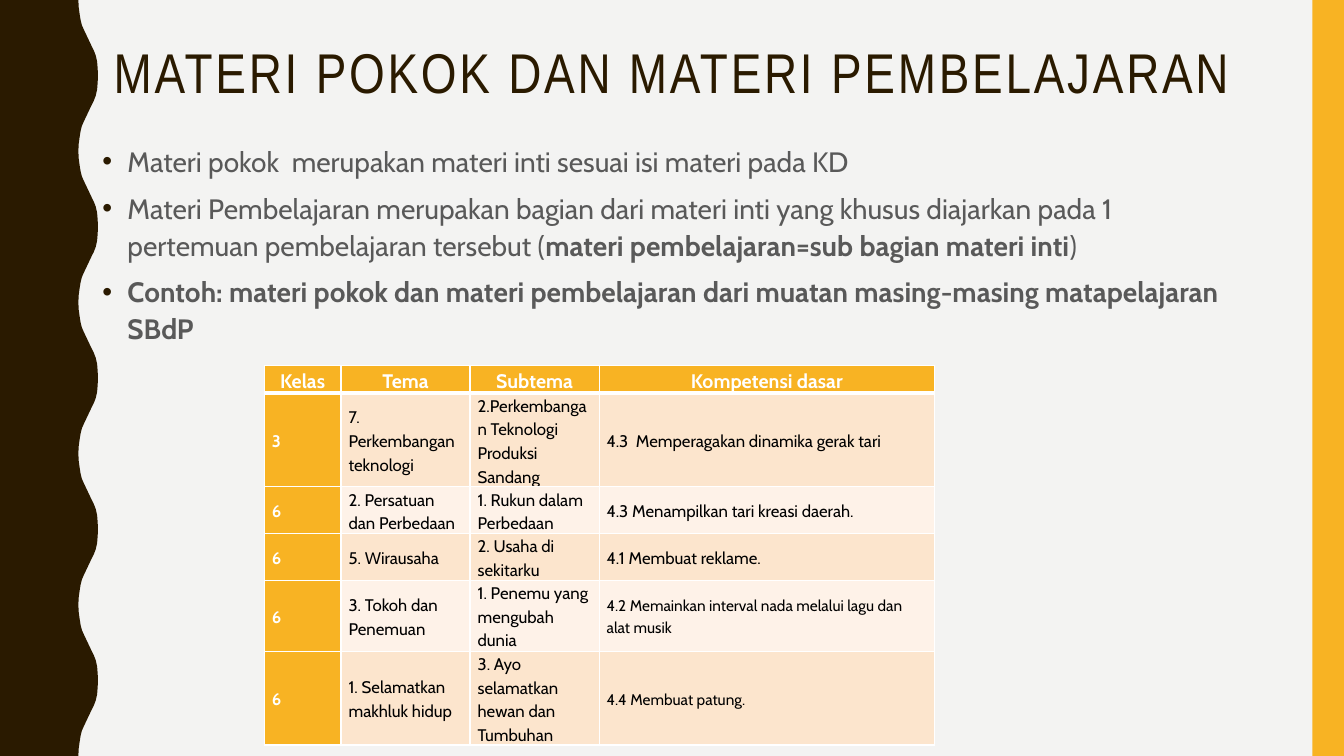
from lxml.etree import SubElement
from pptx import Presentation
from pptx.dml.color import RGBColor
from pptx.enum.shapes import MSO_SHAPE as Shape
from pptx.enum.text import MSO_ANCHOR as Anchor, PP_ALIGN as Align
from pptx.oxml.ns import qn
from pptx.util import Pt

BROWN = RGBColor(0x2A, 0x1A, 0x00)
GOLD = RGBColor(0xF8, 0xB3, 0x23)
PAPER = RGBColor(0xF3, 0xF3, 0xF2)
GREY = RGBColor(0x59, 0x59, 0x59)
PEACH = RGBColor(0xFC, 0xE5, 0xCD)
CREAM = RGBColor(0xFE, 0xF2, 0xE8)
WHITE = RGBColor(0xFF, 0xFF, 0xFF)
BLACK = RGBColor(0x00, 0x00, 0x00)

SLIDE_WIDTH, SLIDE_HEIGHT = 960, 540
WAVE_LENGTH = 108
HALF_WAVE = [(56, 0), (56.2, 5), (56.9, 10), (57.6, 14.4), (58.5, 18), (59.8, 21),
             (65.5, 33), (67, 36), (68.4, 39.6), (69.4, 44), (69.8, 49), (70, 54)]

POINTS = [
    [("Materi pokok  merupakan materi inti sesuai isi materi pada KD", False)],
    [("Materi Pembelajaran merupakan bagian dari materi inti yang khusus diajarkan "
      "pada 1 pertemuan pembelajaran tersebut (", False),
     ("materi pembelajaran=sub bagian materi inti", True),
     (")", False)],
    [("Contoh: materi pokok dan materi pembelajaran dari muatan masing-masing "
      "matapelajaran SBdP", True)],
]

HEADINGS = ["Kelas", "Tema", "Subtema", "Kompetensi dasar"]
LESSONS = [
    ("3", "7.  Perkembangan teknologi", "2.Perkembangan Teknologi Produksi Sandang",
     "4.3  Memperagakan dinamika gerak tari", 12),
    ("6", "2. Persatuan dan Perbedaan", "1. Rukun dalam Perbedaan",
     "4.3 Menampilkan tari kreasi daerah.", 12),
    ("6", "5. Wirausaha", "2. Usaha di sekitarku", "4.1 Membuat reklame.", 12),
    ("6", "3. Tokoh dan Penemuan", "1. Penemu yang mengubah dunia",
     "4.2 Memainkan interval nada melalui lagu dan alat musik", 11),
    ("6", "1. Selamatkan makhluk hidup", "3. Ayo selamatkan hewan dan Tumbuhan",
     "4.4 Membuat patung.", 11),
]
COLUMN_WIDTHS = [54.8, 92.2, 92.2, 239.8]
ROW_HEIGHTS = [19.5, 67, 33.5, 33.5, 50.5, 67]


def add_run(paragraph, text, size, color, bold=False, font="Cabin"):
    run = paragraph.add_run()
    run.text = text
    run.font.name = font
    run.font.size = Pt(size)
    run.font.bold = bold
    run.font.color.rgb = color
    return run


def paint(shape, color):
    shape.shadow.inherit = False
    shape.fill.solid()
    shape.fill.fore_color.rgb = color
    shape.line.fill.background()


def add_wavy_edge(slide):
    wave = HALF_WAVE + [(x, WAVE_LENGTH - y) for x, y in HALF_WAVE[-2::-1]]
    edge = [(Pt(x), Pt(y + start)) for start in range(0, SLIDE_HEIGHT, WAVE_LENGTH)
            for x, y in wave]
    outline = slide.shapes.build_freeform(0, 0)
    outline.add_line_segments(edge + [(0, Pt(SLIDE_HEIGHT))], close=True)
    paint(outline.convert_to_shape(), BROWN)


def add_side_bar(slide):
    bar = slide.shapes.add_shape(Shape.RECTANGLE, Pt(937.5), 0, Pt(22.5), Pt(SLIDE_HEIGHT))
    paint(bar, GOLD)


def set_title(slide, text):
    title = slide.shapes.title
    title.left, title.top, title.width, title.height = Pt(66), Pt(28.8), Pt(828), Pt(68.4)
    title.text_frame.vertical_anchor = Anchor.TOP
    title.text_frame.word_wrap = True
    paragraph = title.text_frame.paragraphs[0]
    paragraph.alignment = Align.CENTER
    paragraph.line_spacing = 0.9
    run = add_run(paragraph, text, 40, BROWN, font="Arial Narrow")
    run.font._element.set("spc", "200")


def add_bullet(paragraph):
    properties = paragraph._p.get_or_add_pPr()
    properties.set("marL", str(Pt(18)))
    properties.set("indent", str(-Pt(18)))
    color = SubElement(properties, qn("a:buClr"))
    SubElement(color, qn("a:srgbClr")).set("val", str(BROWN))
    SubElement(properties, qn("a:buFont")).set("typeface", "Arial")
    SubElement(properties, qn("a:buChar")).set("char", "•")


def add_points(slide, points):
    body = slide.shapes.add_textbox(Pt(66), Pt(97.2), Pt(828), Pt(389.5)).text_frame
    body.word_wrap = True
    for index, runs in enumerate(points):
        paragraph = body.add_paragraph() if index else body.paragraphs[0]
        add_bullet(paragraph)
        paragraph.line_spacing = 1.1
        if index:
            paragraph.space_before = Pt(7)
        for text, bold in runs:
            add_run(paragraph, text, 20, GREY, bold)


def set_borders(cell, top=1, bottom=1):
    properties = cell._tc.get_or_add_tcPr()
    widths = [("a:lnL", 1), ("a:lnR", 1), ("a:lnT", top), ("a:lnB", bottom)]
    for index, (side, width) in enumerate(widths):
        line = properties.makeelement(qn(side), {"w": str(Pt(width))})
        fill = SubElement(line, qn("a:solidFill"))
        SubElement(fill, qn("a:srgbClr")).set("val", str(WHITE))
        properties.insert(index, line)


def fill_cell(cell, text, size, color, background, bold=False, centred=False):
    cell.fill.solid()
    cell.fill.fore_color.rgb = background
    cell.margin_left = cell.margin_right = Pt(5.4)
    cell.margin_top = cell.margin_bottom = 0
    cell.vertical_anchor = Anchor.TOP if centred else Anchor.MIDDLE
    paragraph = cell.text_frame.paragraphs[0]
    paragraph.alignment = Align.CENTER if centred else Align.LEFT
    paragraph.line_spacing = 1.15
    add_run(paragraph, text, size, color, bold)


def add_lessons(slide):
    table = slide.shapes.add_table(
        len(ROW_HEIGHTS), len(COLUMN_WIDTHS), Pt(188.8), Pt(261.2),
        Pt(sum(COLUMN_WIDTHS)), Pt(sum(ROW_HEIGHTS))).table
    for column, width in zip(table.columns, COLUMN_WIDTHS):
        column.width = Pt(width)
    for row, height in zip(table.rows, ROW_HEIGHTS):
        row.height = Pt(height)
    for column, heading in enumerate(HEADINGS):
        cell = table.cell(0, column)
        fill_cell(cell, heading, 14, WHITE, GOLD, bold=True, centred=True)
        set_borders(cell, bottom=3)
    for row, (grade, theme, subtheme, skill, skill_size) in enumerate(LESSONS, 1):
        band = PEACH if row % 2 else CREAM
        fill_cell(table.cell(row, 0), grade, 12, WHITE, GOLD, bold=True)
        fill_cell(table.cell(row, 1), theme, 12, BLACK, band)
        fill_cell(table.cell(row, 2), subtheme, 12, BLACK, band)
        fill_cell(table.cell(row, 3), skill, skill_size, BLACK, band)
        for column in range(len(COLUMN_WIDTHS)):
            set_borders(table.cell(row, column), top=3 if row == 1 else 1)


def main():
    deck = Presentation()
    deck.slide_width, deck.slide_height = Pt(SLIDE_WIDTH), Pt(SLIDE_HEIGHT)
    slide = deck.slides.add_slide(deck.slide_layouts[5])
    slide.background.fill.solid()
    slide.background.fill.fore_color.rgb = PAPER
    add_wavy_edge(slide)
    add_side_bar(slide)
    set_title(slide, "MATERI POKOK DAN MATERI PEMBELAJARAN")
    add_points(slide, POINTS)
    add_lessons(slide)
    deck.save("out.pptx")


if __name__ == "__main__":
    main()
